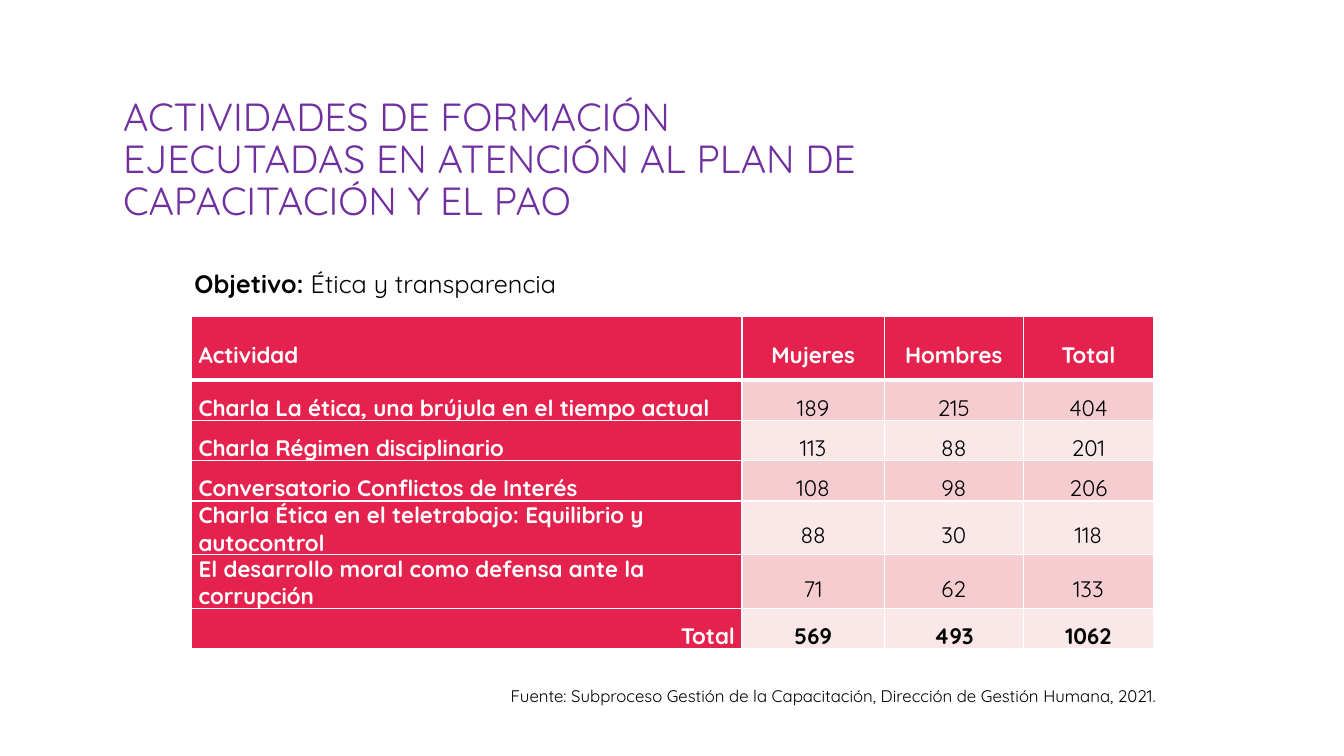
from lxml import etree
from pptx import Presentation
from pptx.dml.color import RGBColor
from pptx.enum import text
from pptx.oxml import ns
from pptx.util import Inches, Pt

# Content
TITLE = ("ACTIVIDADES DE FORMACIÓN EJECUTADAS EN ATENCIÓN "
         "AL PLAN DE CAPACITACIÓN Y EL PAO")
OBJECTIVE = ("Objetivo: ", "Ética y transparencia")
SOURCE = ("Fuente: Subproceso Gestión de la Capacitación, "
          "Dirección de Gestión Humana, 2021.")
ACTIVITIES = [
    ("Actividad", "Mujeres", "Hombres", "Total"),
    ("Charla La ética, una brújula en el tiempo actual", 189, 215, 404),
    ("Charla Régimen disciplinario", 113, 88, 201),
    ("Conversatorio Conflictos de Interés", 108, 98, 206),
    ("Charla Ética en el teletrabajo: Equilibrio y autocontrol", 88, 30, 118),
    ("El desarrollo moral como defensa ante la corrupción", 71, 62, 133),
    ("Total", 569, 493, 1062),
]
COLUMN_WIDTHS = (5.46, 1.41, 1.38, 1.29)
ROW_HEIGHTS = (0.63, 0.4, 0.4, 0.4, 0.53, 0.53, 0.4)
TWO_LINE_ROWS = (4, 5)
FONT = "Quicksand"
COLORS = {"title": "7030A0", "ink": "000000", "white": "FFFFFF",
          "red": "E5224E", "odd": "F5CDD0", "even": "FAE8E9"}
ALIGN = text.PP_ALIGN


def style(paragraph, size, color, bold=None, align=ALIGN.LEFT, spacing=None):
    paragraph.alignment = align
    paragraph.line_spacing = spacing
    font = paragraph.font
    font.name, font.size, font.bold = FONT, Pt(size), bold
    font.color.rgb = RGBColor.from_string(COLORS[color])


def add_line(slide, left, top, width, height):
    frame = slide.shapes.add_textbox(
        Inches(left), Inches(top), Inches(width), Inches(height)).text_frame
    frame.word_wrap = True
    return frame.paragraphs[0]


def add_borders(cell, top, bottom):
    props = cell._tc.get_or_add_tcPr()
    for place, (side, points) in enumerate(
            (("L", 1), ("R", 1), ("T", top), ("B", bottom))):
        line = etree.Element(ns.qn("a:ln" + side), w=str(Pt(points)))
        fill = etree.SubElement(line, ns.qn("a:solidFill"))
        etree.SubElement(fill, ns.qn("a:srgbClr"), val=COLORS["white"])
        props.insert(place, line)


def fill_cell(cell, row, column, value):
    header, label, total = row == 0, column == 0, row == len(ACTIVITIES) - 1
    on_red = header or label
    band = "red" if on_red else "odd" if row % 2 else "even"
    cell.text = str(value)
    cell.vertical_anchor = text.MSO_ANCHOR.MIDDLE
    cell.margin_left = cell.margin_right = Inches(0.07)
    cell.margin_top = cell.margin_bottom = 0
    cell.fill.solid()
    cell.fill.fore_color.rgb = RGBColor.from_string(COLORS[band])
    add_borders(cell, 3 if row == 1 else 1, 3 if header else 1)
    align = ALIGN.CENTER
    if label:
        align = ALIGN.RIGHT if total else ALIGN.LEFT
    spacing = 1.0 if label and row in TWO_LINE_ROWS else 1.5
    style(cell.text_frame.paragraphs[0], 16, "white" if on_red else "ink",
          on_red or total, align, spacing)


def main():
    prs = Presentation()
    prs.slide_width, prs.slide_height = Inches(13.33), Inches(7.5)
    slide = prs.slides.add_slide(prs.slide_layouts[5])

    # Title
    title = slide.shapes.title
    title.left, title.top = Inches(1.12), Inches(0.89)
    title.width, title.height = Inches(7.48), Inches(1.41)
    title.text_frame.text = TITLE
    title.text_frame.vertical_anchor = text.MSO_ANCHOR.MIDDLE
    style(title.text_frame.paragraphs[0], 28, "title", spacing=0.9)

    # Objective
    objective = add_line(slide, 1.83, 2.61, 10.08, 0.4)
    for words, bold in zip(OBJECTIVE, (True, False)):
        run = objective.add_run()
        run.text, run.font.bold = words, bold
    style(objective, 18, "ink")

    # Activities table
    table = slide.shapes.add_table(
        len(ROW_HEIGHTS), len(COLUMN_WIDTHS), Inches(1.9), Inches(3.14),
        Inches(sum(COLUMN_WIDTHS)), Inches(sum(ROW_HEIGHTS))).table
    for column, width in zip(table.columns, COLUMN_WIDTHS):
        column.width = Inches(width)
    for row, height in zip(table.rows, ROW_HEIGHTS):
        row.height = Inches(height)
    for r, activity in enumerate(ACTIVITIES):
        for c, value in enumerate(activity):
            fill_cell(table.cell(r, c), r, c, value)

    # Source line
    source = add_line(slide, 2.93, 6.75, 8.64, 0.3)
    source.text = SOURCE
    style(source, 12, "ink", align=ALIGN.RIGHT)

    prs.save("out.pptx")


if __name__ == "__main__":
    main()
